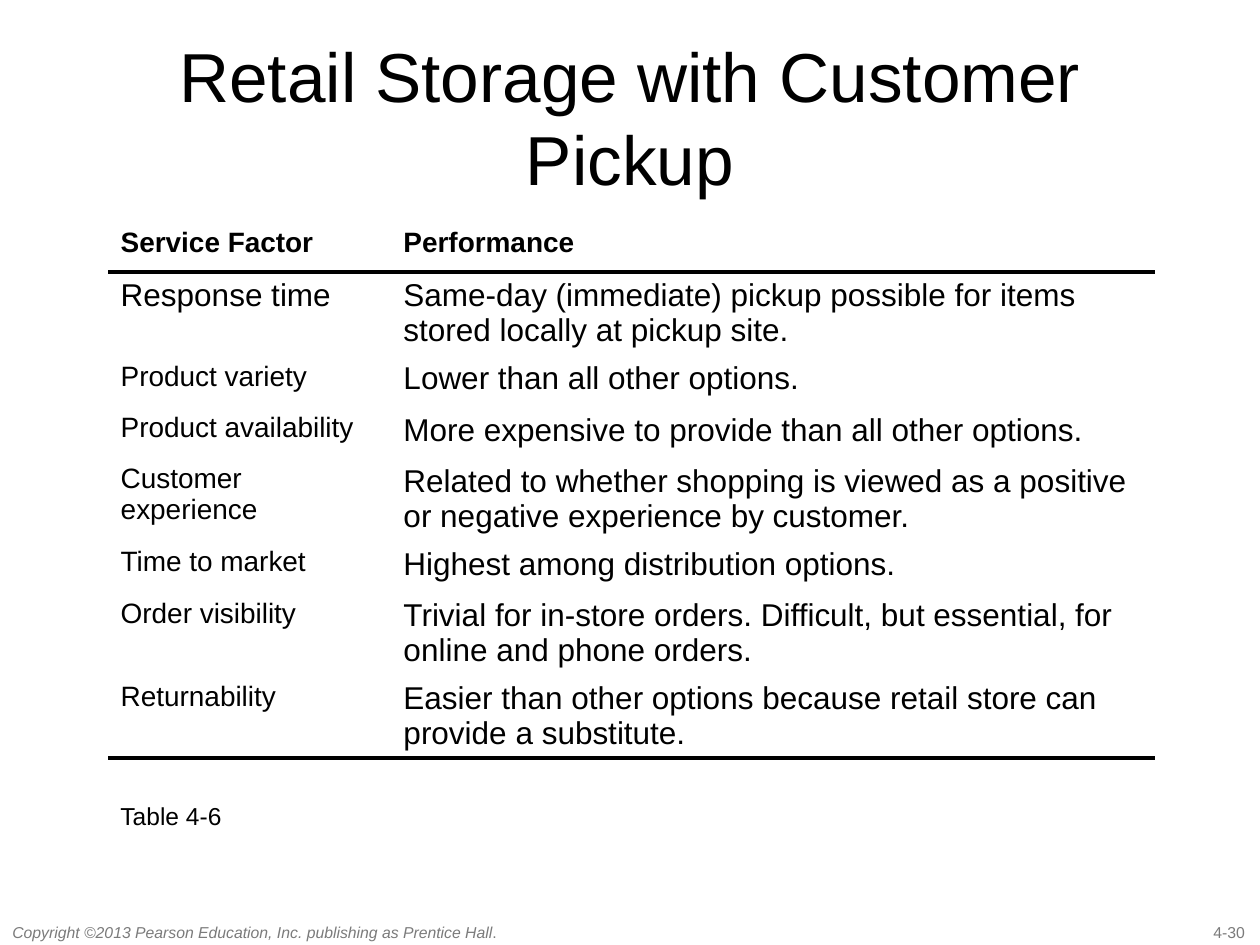
from lxml.etree import SubElement
from pptx import Presentation
from pptx.dml.color import RGBColor
from pptx.enum.text import MSO_ANCHOR as Anchor, MSO_AUTO_SIZE as AutoSize, PP_ALIGN as Align
from pptx.oxml.ns import qn
from pptx.util import Cm, Pt

# Content
TITLE = "Retail Storage with Customer Pickup"
HEADER = ("Service Factor", "Performance")
FACTORS = [
    ("Response time", "Same-day (immediate) pickup possible for items stored locally at pickup site."),
    ("Product variety", "Lower than all other options."),
    ("Product availability", "More expensive to provide than all other options."),
    ("Customer experience", "Related to whether shopping is viewed as a positive or negative experience by customer."),
    ("Time to market", "Highest among distribution options."),
    ("Order visibility", "Trivial for in-store orders. Difficult, but essential, for online and phone orders."),
    ("Returnability", "Easier than other options because retail store can provide a substitute."),
]
CAPTION = "Table 4-6"
COPYRIGHT = "Copyright ©2013 Pearson Education, Inc. publishing as Prentice Hall"
PAGE_NUMBER = "4-30"

# Format
COLORS = {"text": "000000", "footer": "7B7B7B", "background": "FFFFFF"}
FONT = "Arial"
PLAIN_TABLE_STYLE = "{2D5ABB26-0587-4C30-8999-92F81FD0307C}"
TABLE_LEFT, TABLE_TOP = 2.18, 4.45
COLUMN_WIDTHS = (5.7, 15.4)
ROW_HEIGHT = 1.03
FOOTER_TOP = 18.47


def write(paragraph, text, size=16, color="text", bold=False, italic=False):
    run = paragraph.add_run()
    run.text = text
    run.font.name = FONT
    run.font.size = Pt(size)
    run.font.bold = bold
    run.font.italic = italic
    run.font.color.rgb = RGBColor.from_string(COLORS[color])


def add_label(slide, text, left, top, width, height, wrap=False, **style):
    frame = slide.shapes.add_textbox(Cm(left), Cm(top), Cm(width), Cm(height)).text_frame
    frame.word_wrap = wrap
    frame.auto_size = AutoSize.SHAPE_TO_FIT_TEXT
    write(frame.paragraphs[0], text, **style)
    return frame.paragraphs[0]


def add_bottom_rule(cell):
    """Draw a cell's lower border; the line element must come before the cell fill."""
    properties = cell._tc.get_or_add_tcPr()
    line = SubElement(properties, qn("a:lnB"), w=str(Pt(2.25)))
    fill = SubElement(line, qn("a:solidFill"))
    SubElement(fill, qn("a:srgbClr"), val=COLORS["text"])
    properties.insert(0, line)


def add_factor_table(slide):
    rows = [HEADER, *FACTORS]
    ruled_rows = (0, len(rows) - 1)
    table = slide.shapes.add_table(
        len(rows), len(HEADER), Cm(TABLE_LEFT), Cm(TABLE_TOP),
        Cm(sum(COLUMN_WIDTHS)), Cm(ROW_HEIGHT * len(rows))).table
    table.first_row = table.horz_banding = False
    table._tbl.tblPr.find(qn("a:tableStyleId")).text = PLAIN_TABLE_STYLE
    for column, width in zip(table.columns, COLUMN_WIDTHS):
        column.width = Cm(width)
    for row_index, texts in enumerate(rows):
        table.rows[row_index].height = Cm(ROW_HEIGHT)
        for column_index, text in enumerate(texts):
            cell = table.cell(row_index, column_index)
            large = row_index == 1 or (row_index > 1 and column_index == 1)
            write(cell.text_frame.paragraphs[0], text,
                  size=18 if large else 16, bold=row_index == 0)
            cell.fill.background()
            if row_index in ruled_rows:
                add_bottom_rule(cell)


def main():
    presentation = Presentation()
    presentation.slide_width, presentation.slide_height = Cm(25.4), Cm(19.05)
    slide = presentation.slides.add_slide(presentation.slide_layouts[5])
    slide.background.fill.solid()
    slide.background.fill.fore_color.rgb = RGBColor.from_string(COLORS["background"])

    # Title
    title = slide.shapes.title
    title.left, title.top, title.width, title.height = Cm(1.27), Cm(0.76), Cm(22.86), Cm(3.18)
    title.text_frame.auto_size = AutoSize.NONE
    title.text_frame.vertical_anchor = Anchor.MIDDLE
    title.text_frame.paragraphs[0].alignment = Align.CENTER
    write(title.text_frame.paragraphs[0], TITLE, size=39.6)

    # Table and caption
    add_factor_table(slide)
    add_label(slide, CAPTION, TABLE_LEFT, 16.03, 2.57, 0.86, size=14)

    # Footer
    copyright_line = add_label(slide, COPYRIGHT, 0, FOOTER_TOP, 10.6, 0.64, wrap=True,
                               size=9, color="footer", italic=True)
    write(copyright_line, ".", size=9, color="footer")
    add_label(slide, PAGE_NUMBER, 24.21, FOOTER_TOP, 1.19, 0.64, size=9, color="footer")

    presentation.save("out.pptx")


if __name__ == "__main__":
    main()
